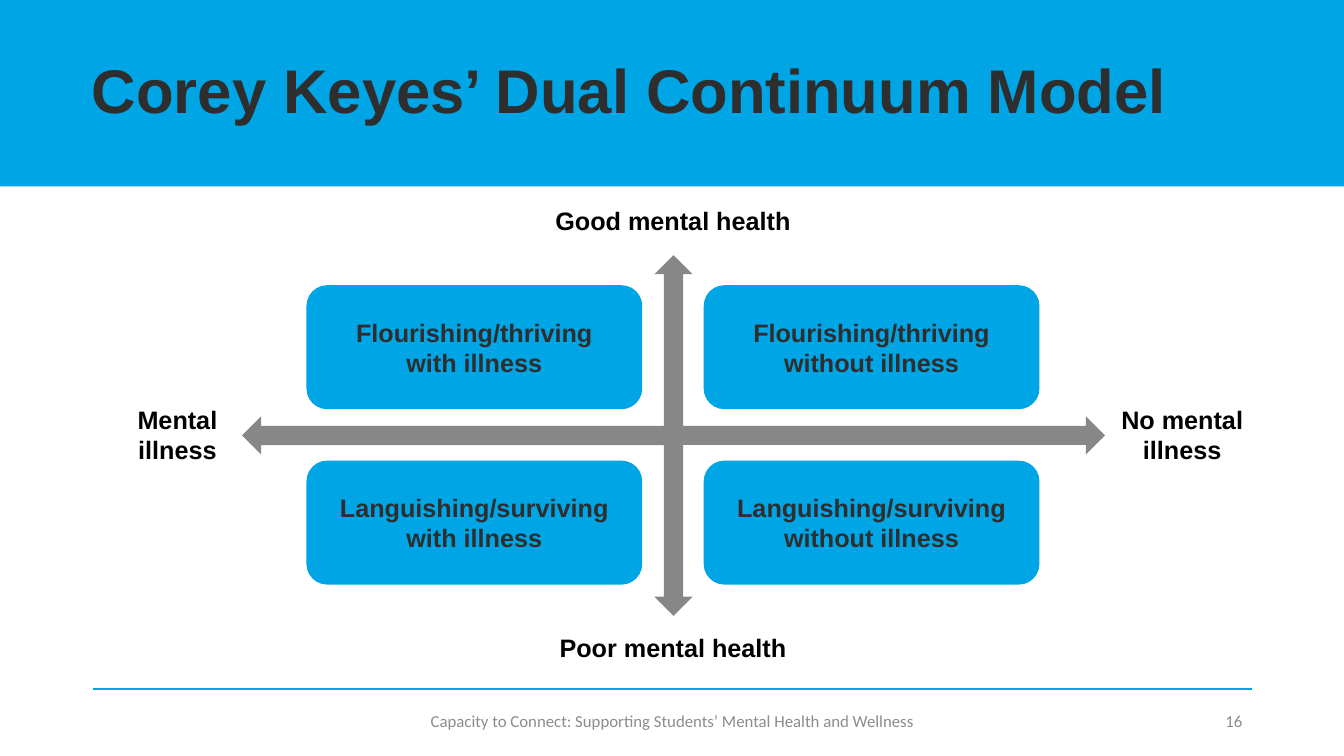
from pptx import Presentation
from pptx.dml.color import RGBColor
from pptx.enum import shapes, text
from pptx.oxml.ns import qn
from pptx.util import Inches, Pt
from lxml import etree

COLORS = {"blue": "00A5E6", "dark": "2E2E2E", "black": "000000",
          "arrow": "878787", "footer": "8C8C8C"}
CENTER = text.PP_ALIGN.CENTER
SHAPE = shapes.MSO_SHAPE


def rgb(name):
    return RGBColor.from_string(COLORS[name])


class Deck:
    def __init__(self):
        self.prs = Presentation()
        self.prs.slide_width = Inches(13.33)
        self.prs.slide_height = Inches(7.5)
        self.slide = self.prs.slides.add_slide(self.prs.slide_layouts[5])

    def set_text(self, sp, lines, color="black", size=18, font="Arial", bold=True,
                 align=CENTER, anchor=text.MSO_ANCHOR.MIDDLE):
        tf = sp.text_frame
        tf.word_wrap = True
        tf.auto_size = text.MSO_AUTO_SIZE.NONE
        tf.vertical_anchor = anchor
        for i, line in enumerate(lines):
            p = tf.paragraphs[0] if i == 0 else tf.add_paragraph()
            p.alignment = align
            r = p.add_run()
            r.text = line
            r.font.name, r.font.size, r.font.bold = font, Pt(size), bold
            r.font.color.rgb = rgb(color)
        return tf

    def title(self, line, height):
        sp = self.slide.shapes.title
        sp.left, sp.top = Inches(0), Inches(0)
        sp.width, sp.height = self.prs.slide_width, Inches(height)
        sp.fill.solid()
        sp.fill.fore_color.rgb = rgb("blue")
        p = self.set_text(sp, [line], "dark", 44, align=text.PP_ALIGN.LEFT).paragraphs[0]
        p.line_spacing = 0.9
        pPr = p._p.get_or_add_pPr()
        pPr.set("marL", str(Inches(0.81)))
        pPr.set("indent", "0")

    def shape(self, kind, x, y, w, h, color):
        sp = self.slide.shapes.add_shape(kind, Inches(x), Inches(y), Inches(w), Inches(h))
        sp.shadow.inherit = False
        sp.fill.solid()
        sp.fill.fore_color.rgb = rgb(color)
        sp.line.fill.background()
        return sp

    def card(self, x, y, lines):
        sp = self.shape(SHAPE.ROUNDED_RECTANGLE, x, y, 3.33, 1.23, "blue")
        tf = self.set_text(sp, lines, "dark")
        tf.margin_top = tf.margin_bottom = Inches(0.25)

    def arrow(self, cx, cy, length, angle):
        sp = self.shape(SHAPE.RIGHT_ARROW, cx - length / 2, cy - 0.19, length, 0.38, "arrow")
        sp.rotation = angle

    def label(self, x, y, w, h, lines, **style):
        sp = self.slide.shapes.add_textbox(Inches(x), Inches(y), Inches(w), Inches(h))
        self.set_text(sp, lines, **style)

    def rule(self, x1, x2, y):
        cn = self.slide.shapes.add_connector(
            shapes.MSO_CONNECTOR.STRAIGHT, Inches(x1), Inches(y), Inches(x2), Inches(y))
        cn.line.color.rgb = rgb("blue")
        cn.line.width = Pt(1.5)
        etree.SubElement(cn._element.spPr, qn("a:effectLst"))


def main():
    deck = Deck()
    deck.title("Corey Keyes’ Dual Continuum Model", 1.85)
    deck.rule(0.92, 12.42, 6.84)

    for y, state in ((2.83, "Flourishing/thriving"), (4.57, "Languishing/surviving")):
        for x, illness in ((3.04, "with illness"), (6.98, "without illness")):
            deck.card(x, y, [state, illness])

    for cx, cy, length, angle in ((8.82, 4.32, 4.28, 0), (4.54, 4.32, 4.28, 180),
                                  (6.68, 5.21, 1.8, 90), (6.68, 3.43, 1.8, 270)):
        deck.arrow(cx, cy, length, angle)

    top = text.MSO_ANCHOR.TOP
    for x, y, w, h, lines in ((5, 1.99, 3.35, 0.4, ["Good mental health"]),
                              (5, 6.22, 3.35, 0.4, ["Poor mental health"]),
                              (1.22, 3.96, 1.08, 0.71, ["Mental", "illness"]),
                              (11, 3.96, 1.45, 0.71, ["No mental", "illness"])):
        deck.label(x, y, w, h, lines, anchor=top)

    footer = {"color": "footer", "size": 12, "font": "Calibri", "bold": False}
    deck.label(4.17, 6.95, 5, 0.4,
               ["Capacity to Connect: Supporting Students’ Mental Health and Wellness"], **footer)
    deck.label(9.42, 6.95, 3, 0.4, ["16"], align=text.PP_ALIGN.RIGHT, **footer)

    deck.prs.save("out.pptx")


if __name__ == "__main__":
    main()
